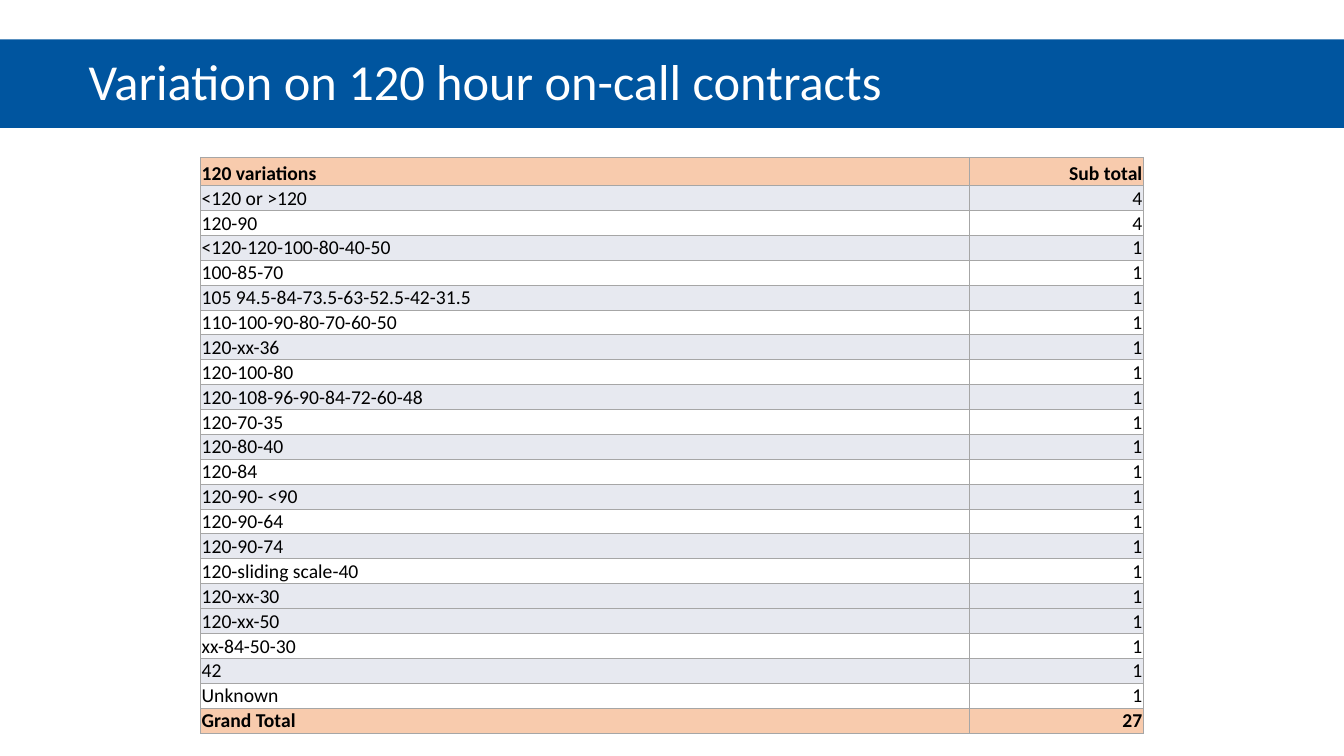
from lxml import etree
from pptx import Presentation
from pptx.dml.color import RGBColor
from pptx.enum.shapes import MSO_SHAPE
from pptx.enum.text import MSO_ANCHOR, PP_ALIGN
from pptx.oxml.ns import qn
from pptx.util import Inches, Pt

TITLE = "Variation on 120 hour on-call contracts"
HEADER = ("120 variations", "Sub total")
VARIATIONS = [
    ("<120 or >120", 4),
    ("120-90", 4),
    ("<120-120-100-80-40-50", 1),
    ("100-85-70", 1),
    ("105 94.5-84-73.5-63-52.5-42-31.5", 1),
    ("110-100-90-80-70-60-50", 1),
    ("120-xx-36", 1),
    ("120-100-80", 1),
    ("120-108-96-90-84-72-60-48", 1),
    ("120-70-35", 1),
    ("120-80-40", 1),
    ("120-84", 1),
    ("120-90- <90", 1),
    ("120-90-64", 1),
    ("120-90-74", 1),
    ("120-sliding scale-40", 1),
    ("120-xx-30", 1),
    ("120-xx-50", 1),
    ("xx-84-50-30", 1),
    ("42", 1),
    ("Unknown", 1),
]
TOTAL = ("Grand Total", sum(count for _, count in VARIATIONS))
BAND_RESTART = 18

FONT = "Calibri"
BLUE = RGBColor(0x00, 0x55, 0x9F)
WHITE = RGBColor(0xFF, 0xFF, 0xFF)
BLACK = RGBColor(0x00, 0x00, 0x00)
PEACH = RGBColor(0xF8, 0xCB, 0xAD)
PALE = RGBColor(0xE7, 0xE9, 0xF0)
BORDER = RGBColor(0xA6, 0xA6, 0xA6)
RECTANGLE = MSO_SHAPE.RECTANGLE
MIDDLE, BOTTOM = MSO_ANCHOR.MIDDLE, MSO_ANCHOR.BOTTOM
LEFT, RIGHT = PP_ALIGN.LEFT, PP_ALIGN.RIGHT

COLUMN_WIDTHS = (7.62, 1.73)
HEADER_HEIGHT, ROW_HEIGHT = 0.28, 0.24


def write_text(frame, text, *, size, color, bold=False, align=LEFT, spacing=1.0):
    paragraph = frame.paragraphs[0]
    paragraph.alignment = align
    paragraph.line_spacing = spacing
    run = paragraph.add_run()
    run.text = text
    run.font.name = FONT
    run.font.size = Pt(size)
    run.font.bold = bold
    run.font.color.rgb = color


def set_borders(cell):
    properties = cell._tc.get_or_add_tcPr()
    for position, side in enumerate(("a:lnL", "a:lnR", "a:lnT", "a:lnB")):
        line = etree.Element(qn(side), w=str(Pt(0.5)))
        fill = etree.SubElement(line, qn("a:solidFill"))
        etree.SubElement(fill, qn("a:srgbClr"), val=str(BORDER))
        properties.insert(position, line)


def add_title(slide):
    shape = slide.shapes.add_shape(
        RECTANGLE, 0, Inches(0.39), Inches(13.33), Inches(0.88))
    shape.shadow.inherit = False
    shape.fill.solid()
    shape.fill.fore_color.rgb = BLUE
    shape.line.fill.background()
    frame = shape.text_frame
    frame.word_wrap = True
    frame.vertical_anchor = MIDDLE
    frame.margin_left = Inches(0.88)
    write_text(frame, TITLE, size=36, color=WHITE, spacing=0.9)


def row_fill(index, last):
    if index in (0, last):
        return PEACH
    shaded_remainder = 1 if index < BAND_RESTART else 0
    return PALE if index % 2 == shaded_remainder else None


def add_variation_table(slide):
    rows = [HEADER, *VARIATIONS, TOTAL]
    last = len(rows) - 1
    height = HEADER_HEIGHT + last * ROW_HEIGHT
    table = slide.shapes.add_table(
        len(rows), len(COLUMN_WIDTHS), Inches(1.99), Inches(1.56),
        Inches(sum(COLUMN_WIDTHS)), Inches(height)).table
    table.horz_banding = False
    for column, width in zip(table.columns, COLUMN_WIDTHS):
        column.width = Inches(width)
    for index, values in enumerate(rows):
        table.rows[index].height = Inches(ROW_HEIGHT if index else HEADER_HEIGHT)
        color = row_fill(index, last)
        for cell, value, align in zip(table.rows[index].cells, values, (LEFT, RIGHT)):
            cell.margin_left = cell.margin_right = cell.margin_top = Inches(0.01)
            cell.margin_bottom = 0
            cell.vertical_anchor = BOTTOM
            if color is None:
                cell.fill.background()
            else:
                cell.fill.solid()
                cell.fill.fore_color.rgb = color
            set_borders(cell)
            write_text(cell.text_frame, str(value), size=14, color=BLACK,
                       bold=index in (0, last), align=align)


def main():
    presentation = Presentation()
    presentation.slide_width = Inches(13.33)
    presentation.slide_height = Inches(7.5)
    slide = presentation.slides.add_slide(presentation.slide_layouts[6])
    add_title(slide)
    add_variation_table(slide)
    presentation.save("out.pptx")


if __name__ == "__main__":
    main()
